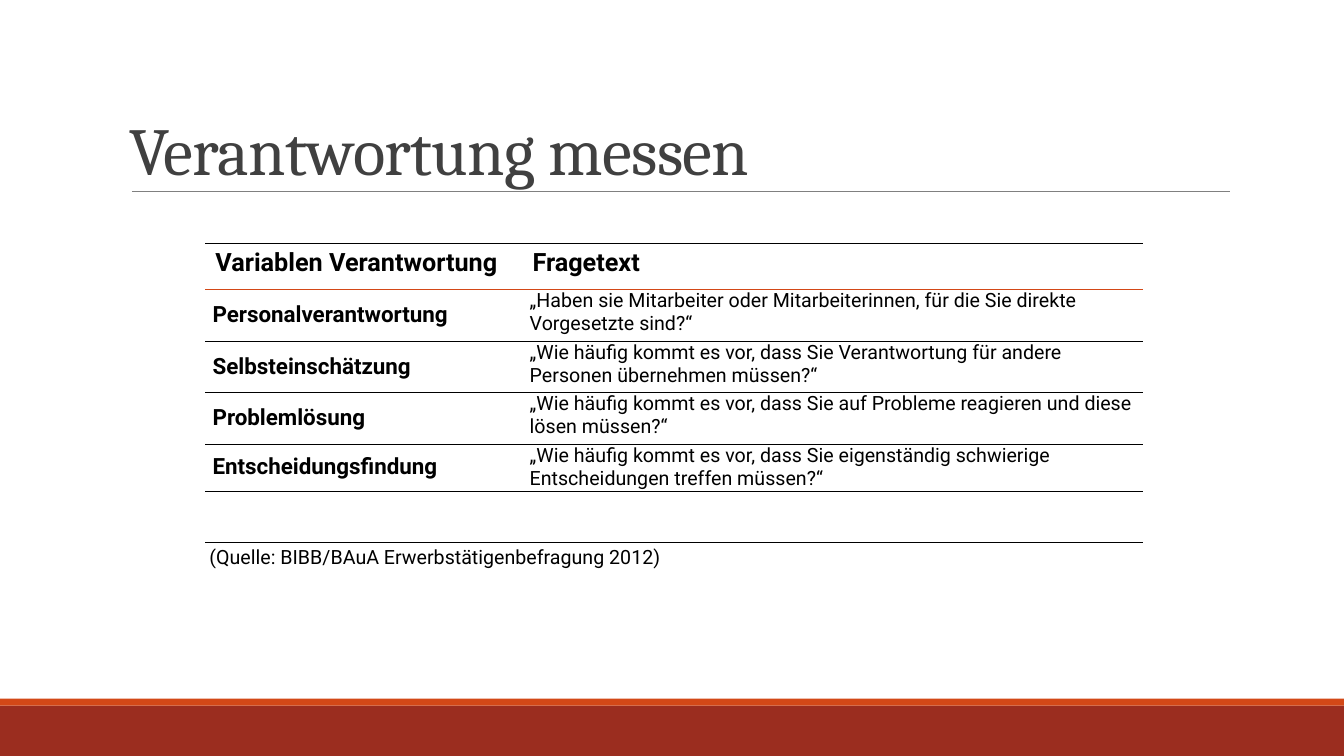
from lxml.etree import SubElement
from pptx import Presentation
from pptx.dml.color import RGBColor
from pptx.enum.shapes import MSO_CONNECTOR, MSO_SHAPE
from pptx.enum.text import MSO_ANCHOR, MSO_AUTO_SIZE, PP_ALIGN
from pptx.oxml.ns import qn
from pptx.util import Pt

BLACK = RGBColor(0x00, 0x00, 0x00)
WHITE = RGBColor(0xFF, 0xFF, 0xFF)
DARK = RGBColor(0x40, 0x40, 0x40)
GREY = RGBColor(0x80, 0x80, 0x80)
RED = RGBColor(0x9B, 0x2D, 0x1F)
ORANGE = RGBColor(0xD3, 0x48, 0x17)


def write(tf, text, size, color=BLACK, font="Roboto", bold=False):
    p = tf.paragraphs[0]
    r = p.add_run()
    r.text = text
    r.font.name = font
    r.font.size = Pt(size)
    r.font.bold = bold
    r.font.color.rgb = color
    return p, r


def border(cell, side, color=None, width=0):
    ln = SubElement(cell._tc.get_or_add_tcPr(), qn(f"a:ln{side}"), w=str(int(Pt(width))))
    if color is None:
        SubElement(ln, qn("a:noFill"))
    else:
        fill = SubElement(ln, qn("a:solidFill"))
        SubElement(fill, qn("a:srgbClr"), val=str(color))


prs = Presentation()
prs.slide_width, prs.slide_height = Pt(960), Pt(540)
s = prs.slides.add_slide(prs.slide_layouts[5])

for top, height, color in [(504, 36, RED), (499, 5, ORANGE)]:
    bar = s.shapes.add_shape(MSO_SHAPE.RECTANGLE, 0, Pt(top), Pt(960), Pt(height))
    bar.shadow.inherit = False
    bar.fill.solid()
    bar.fill.fore_color.rgb = color
    bar.line.fill.background()

rule = s.shapes.add_connector(MSO_CONNECTOR.STRAIGHT, Pt(94.3), Pt(136.7), Pt(878.8), Pt(136.7))
rule.line.color.rgb = GREY
rule.line.width = Pt(0.5)
SubElement(rule._element.spPr, qn("a:effectLst"))

title = s.shapes.title
title.left, title.top, title.width, title.height = Pt(85), Pt(34.5), Pt(793.5), Pt(104.4)
tf = title.text_frame
tf.word_wrap = True
tf.auto_size = MSO_AUTO_SIZE.NONE
tf.vertical_anchor = MSO_ANCHOR.BOTTOM
p, r = write(tf, "Verantwortung messen", 48, DARK, "Cambria")
p.alignment = PP_ALIGN.LEFT
p.line_spacing = 0.85
r.font._element.set("spc", "-50")

rows = [
    ("Variablen Verantwortung", "Fragetext"),
    ("Personalverantwortung",
     "„Haben sie Mitarbeiter oder Mitarbeiterinnen, für die Sie direkte Vorgesetzte sind?“"),
    ("Selbsteinschätzung",
     "„Wie häufig kommt es vor, dass Sie Verantwortung für andere Personen übernehmen müssen?“"),
    ("Problemlösung",
     "„Wie häufig kommt es vor, dass Sie auf Probleme reagieren und diese lösen müssen?“"),
    ("Entscheidungsfindung",
     "„Wie häufig kommt es vor, dass Sie eigenständig schwierige Entscheidungen treffen müssen?“"),
    ("", ""),
]
heights = [32.6, 36.8, 36.8, 36.8, 33.6, 36.4]
edges = [(BLACK, 0.25), (ORANGE, 1)] + [(BLACK, 0.25)] * 5

frame = s.shapes.add_table(len(rows), 2, Pt(146.7), Pt(174), Pt(670), Pt(sum(heights)))
table = frame.table
table.first_row = table.horz_banding = False
table.columns[0].width, table.columns[1].width = Pt(226.5), Pt(443.5)

for i, texts in enumerate(rows):
    table.rows[i].height = Pt(heights[i])
    for j, text in enumerate(texts):
        cell = table.cell(i, j)
        if i > 0:
            cell.margin_left = cell.margin_right = Pt(5.2)
            cell.margin_top = cell.margin_bottom = 0
            if j == 0:
                cell.vertical_anchor = MSO_ANCHOR.MIDDLE
        if text:
            size = 18 if i == 0 else (16, 14)[j]
            write(cell.text_frame, text, size, bold=i == 0 or j == 0)
        border(cell, "L")
        border(cell, "R")
        border(cell, "T", *edges[i])
        border(cell, "B", *edges[i + 1])
        cell.fill.solid()
        cell.fill.fore_color.rgb = WHITE

source = s.shapes.add_textbox(Pt(142.5), Pt(386), Pt(339), Pt(24.2))
tf = source.text_frame
tf.word_wrap = False
tf.auto_size = MSO_AUTO_SIZE.SHAPE_TO_FIT_TEXT
p, r = write(tf, "(Quelle: BIBB/BAuA Erwerbstätigenbefragung 2012)", 14)
p.alignment = PP_ALIGN.JUSTIFY

prs.save("out.pptx")
